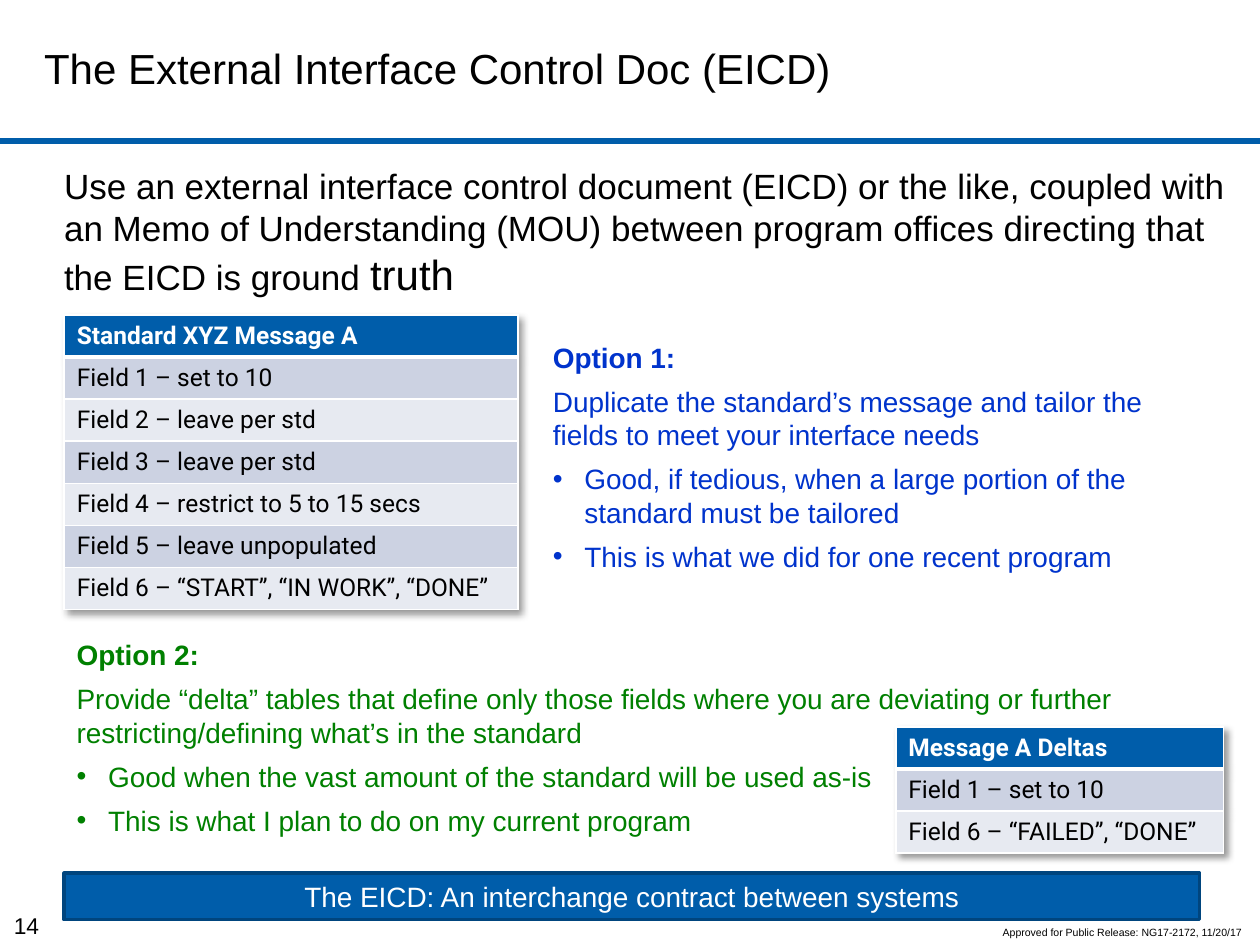
import pptx
import pptx.dml.color
import pptx.enum.shapes
import pptx.enum.text
import pptx.oxml
import pptx.oxml.ns
import pptx.util
from pptx.util import Inches

BLUE, DARK_BLUE, BLACK, WHITE = "005DAA", "00457E", "000000", "FFFFFF"
BANDS = ["CCD2E2", "E7EAF1"]
ANCHOR = pptx.enum.text.MSO_ANCHOR
ALIGN = pptx.enum.text.PP_ALIGN


def rgb(value):
    """Turn a hex string into a colour."""
    return pptx.dml.color.RGBColor.from_string(value)


def element(xml):
    """Parse a DrawingML fragment."""
    head, mark, tail = xml.partition("/>" if xml.find("/>") < xml.find(">") else ">")
    return pptx.oxml.parse_xml(f"{head} {pptx.oxml.ns.nsdecls('a')}{mark}{tail}")


class Deck:
    """Hold the presentation style and the current slide."""

    def __init__(self, font="Arial", table_font="Roboto"):
        """Start a 10 by 7.5 inch presentation."""
        self.font, self.table_font = font, table_font
        self.prs = pptx.Presentation()
        self.prs.slide_width, self.prs.slide_height = Inches(10), Inches(7.5)

    def style(self, p, size, color=BLACK, bold=False, font=None):
        """Format every run of a paragraph."""
        for r in p.runs:
            r.font.name = font or self.font
            r.font.size = pptx.util.Pt(size)
            r.font.bold = bold
            r.font.color.rgb = rgb(color)

    def slide(self, title, x, y, w, h):
        """Add a slide with a formatted title."""
        self.s = self.prs.slides.add_slide(self.prs.slide_layouts[5])
        sp = self.s.shapes.title
        sp.left, sp.top, sp.width, sp.height = map(Inches, (x, y, w, h))
        tf = sp.text_frame
        tf.text = title
        tf.vertical_anchor = ANCHOR.MIDDLE
        tf.paragraphs[0].alignment = ALIGN.LEFT
        self.style(tf.paragraphs[0], 24)

    def rule(self, x1, y, x2, width):
        """Draw a horizontal rule."""
        line = self.s.shapes.add_connector(
            pptx.enum.shapes.MSO_CONNECTOR.STRAIGHT, *map(Inches, (x1, y, x2, y)))
        line.line.color.rgb = rgb(BLUE)
        line.line.width = pptx.util.Pt(width)
        line._element.spPr.append(element("<a:effectLst/>"))

    def text(self, text, x, y, w, h, size, wrap=True, align=ALIGN.LEFT):
        """Add a one-paragraph text box and return the paragraph."""
        tf = self.s.shapes.add_textbox(*map(Inches, (x, y, w, h))).text_frame
        tf.word_wrap = wrap
        tf.text = text
        p = tf.paragraphs[0]
        p.alignment = align
        self.style(p, size)
        return p

    def option(self, heading, summary, bullets, x, y, w, h, color):
        """Add an option with its heading, summary and bullets."""
        tf = self.s.shapes.add_textbox(*map(Inches, (x, y, w, h))).text_frame
        tf.word_wrap = True
        tf.text = "\n".join([heading, summary, *bullets])
        for i, p in enumerate(tf.paragraphs):
            if i > 0:
                p.space_before = pptx.util.Pt(6)
            if i > 1:
                pPr = p._p.get_or_add_pPr()
                pPr.set("marL", str(Inches(0.25)))
                pPr.set("indent", str(-Inches(0.25)))
                pPr.append(element('<a:buFont typeface="Arial"/>'))
                pPr.append(element('<a:buChar char="•"/>'))
            self.style(p, 16, color, bold=i == 0)

    def table(self, rows, x, y, w, row_height=0.33):
        """Add a one-column banded table with a header and a shadow."""
        frame = self.s.shapes.add_table(
            len(rows), 1, *map(Inches, (x, y, w, row_height * len(rows))))
        table = frame.table
        table._tbl.tblPr.insert(0, element(
            '<a:effectLst><a:outerShdw blurRad="50800" dist="38100" dir="2700000" '
            'algn="tl" rotWithShape="0"><a:srgbClr val="000000"><a:alpha val="40000"/>'
            '</a:srgbClr></a:outerShdw></a:effectLst>'))
        for i, text in enumerate(rows):
            cell = table.cell(i, 0)
            cell.text = text
            self.style(cell.text_frame.paragraphs[0], 14, BLACK if i else WHITE,
                       bold=i == 0, font=self.table_font)
            tcPr = cell._tc.get_or_add_tcPr()
            widths = {"L": 1, "R": 1, "T": 3 if i == 1 else 1, "B": 1 if i else 3}
            for side, width in widths.items():
                tcPr.append(element(
                    f'<a:ln{side} w="{pptx.util.Pt(width)}"><a:solidFill>'
                    f'<a:srgbClr val="{WHITE}"/></a:solidFill></a:ln{side}>'))
            cell.fill.solid()
            cell.fill.fore_color.rgb = rgb(BANDS[(i - 1) % 2] if i else BLUE)

    def banner(self, text, x, y, w, h):
        """Add a filled rectangle with centred text."""
        sp = self.s.shapes.add_shape(
            pptx.enum.shapes.MSO_SHAPE.RECTANGLE, *map(Inches, (x, y, w, h)))
        sp.shadow.inherit = False
        sp.fill.solid()
        sp.fill.fore_color.rgb = rgb(BLUE)
        sp.line.color.rgb = rgb(DARK_BLUE)
        sp.line.width = pptx.util.Pt(2)
        tf = sp.text_frame
        tf.text = text
        tf.vertical_anchor = ANCHOR.TOP
        tf.paragraphs[0].alignment = ALIGN.CENTER
        self.style(tf.paragraphs[0], 16, WHITE)


def main():
    """Build the slide and save it."""
    deck = Deck()
    deck.slide("The External Interface Control Doc (EICD)", 0.25, 0.08, 7.33, 0.92)
    deck.rule(0, 1.12, 10, 3.75)
    deck.option(
        "Option 2:",
        "Provide “delta” tables that define only those fields where you are "
        "deviating or further restricting/defining what’s in the standard",
        ["Good when the vast amount of the standard will be used as-is",
         "This is what I plan to do on my current program"],
        0.51, 5.01, 9.11, 1.75, "008000")
    intro = deck.text(
        "Use an external interface control document (EICD) or the like, coupled "
        "with an Memo of Understanding (MOU) between program offices directing "
        "that the EICD is ground ", 0.41, 1.26, 9.42, 1.27, 20)
    intro.add_run().text = "truth"
    deck.style(intro, 20)
    intro.runs[-1].font.size = pptx.util.Pt(24)
    deck.text("14", 0, 7.19, 0.42, 0.33, 13, wrap=False, align=ALIGN.CENTER)
    deck.table(
        ["Standard XYZ Message A", "Field 1 – set to 10", "Field 2 – leave per std",
         "Field 3 – leave per std", "Field 4 – restrict to 5 to 15 secs",
         "Field 5 – leave unpopulated", "Field 6 – “START”, “IN WORK”, “DONE”"],
        0.51, 2.5, 3.6)
    deck.table(
        ["Message A Deltas", "Field 1 – set to 10", "Field 6 – “FAILED”, “DONE”"],
        7.11, 5.77, 2.6)
    deck.option(
        "Option 1:",
        "Duplicate the standard’s message and tailor the fields to meet your "
        "interface needs",
        ["Good, if tedious, when a large portion of the standard must be tailored",
         "This is what we did for one recent program"],
        4.29, 2.65, 5.33, 2.15, "0033CC")
    deck.banner("The EICD: An interchange contract between systems",
                0.51, 6.93, 9.01, 0.37)
    deck.text("Approved for Public Release: NG17-2172, 11/20/17",
              7.86, 7.3, 2.13, 0.2, 6, wrap=False)
    deck.prs.save("out.pptx")


if __name__ == "__main__":
    main()
